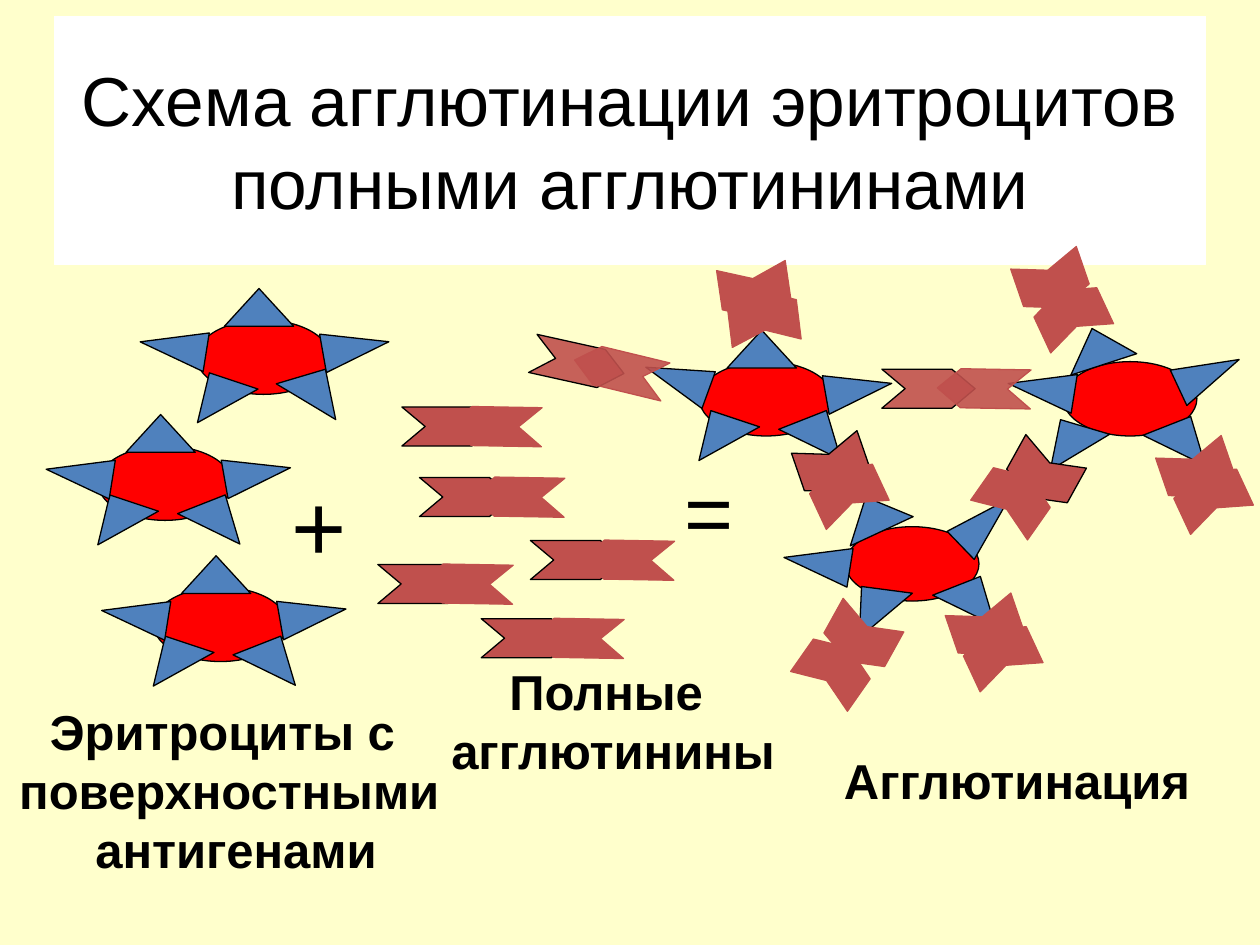
from dataclasses import dataclass, field

from lxml import etree
from pptx import Presentation
from pptx.dml.color import RGBColor
from pptx.enum.shapes import MSO_SHAPE
from pptx.enum.text import MSO_ANCHOR, MSO_AUTO_SIZE, PP_ALIGN
from pptx.oxml.ns import qn
from pptx.util import Pt

OVAL, TRIANGLE, CHEVRON = MSO_SHAPE.OVAL, MSO_SHAPE.ISOSCELES_TRIANGLE, MSO_SHAPE.CHEVRON
LEFT, CENTER = PP_ALIGN.LEFT, PP_ALIGN.CENTER
MIDDLE, TOP = MSO_ANCHOR.MIDDLE, MSO_ANCHOR.TOP
GROW, FIXED = MSO_AUTO_SIZE.SHAPE_TO_FIT_TEXT, MSO_AUTO_SIZE.NONE


@dataclass(frozen=True)
class Theme:
    font: str = "Arial"
    page: str = "FFFFCC"
    title_fill: str = "FFFFFF"
    ink: str = "000000"
    cell: str = "FF0000"
    antigen: str = "4F81BD"
    agglutinin: str = "C0504D"
    title_size: float = 39.6
    label_size: float = 28
    plus_size: float = 54
    equals_size: float = 48
    line_width: float = 0.75


THEME = Theme()
CELL_SIZE = (76.3, 42.5)
WIDE_SPIKE, TALL_SPIKE = (39.6, 21.6), (22.3, 38.2)


@dataclass(frozen=True)
class Spike:
    """Antigen triangle, its centre given from the centre of the cell."""
    dx: float
    dy: float
    turn: float


SPIKES = {
    "right": Spike(52.9, -5.5, 80),
    "top": Spike(-2.5, -28.4, 0),
    "lower_right": Spike(29.7, 16.4, 26),
    "lower_left": Spike(-26.3, 16.2, 331),
    "left": Spike(-49, -5, 279),
}


@dataclass(frozen=True)
class Cell:
    x: float
    y: float
    moved: dict[str, Spike] = field(default_factory=dict)


@dataclass(frozen=True)
class Agglutinin:
    """Two chevrons; x, y is the centre of the first, dx, dy leads to the second."""
    x: float
    y: float
    dx: float
    dy: float = 0
    turns: tuple[float, float] = (0, 181)
    size: tuple[float, float] = (53.3, 22.3)
    notch: float = 0.596
    first_line: str = THEME.ink
    alpha: int = 100


@dataclass(frozen=True)
class Label:
    lines: tuple[str, ...]
    box: tuple[float, float, float, float]
    size: float = THEME.label_size
    bold: bool = True
    align: PP_ALIGN = CENTER
    wrap: bool = False


CELLS = [
    Cell(150.5, 204.1, {"lower_right": Spike(29.9, 16.2, 31),
                        "lower_left": Spike(-25.6, 18.4, 331),
                        "left": Spike(-51.5, -5.8, 279)}),
    Cell(94.3, 276.1),
    Cell(126, 356.8),
    Cell(521.3, 322.2, {"right": Spike(41.4, -23.8, 46), "top": Spike(-22, -28.4, 335),
                        "lower_right": Spike(34.2, 16.9, 26),
                        "lower_left": Spike(-22, 21.2, 320),
                        "left": Spike(-54.4, -0.7, 279)}),
    Cell(437.8, 227.9, {"left": Spike(-50.8, -11.5, 290)}),
    Cell(645.8, 227.9, {"right": Spike(45, -14.4, 65), "top": Spike(-18.4, -29.9, 342),
                        "lower_right": Spike(29.9, 19.8, 26),
                        "lower_left": Spike(-34.2, 21.2, 329),
                        "left": Spike(-50.8, -5.8, 279)}),
]

SHORT = {"size": (30.2, 39.6), "notch": 0.25}
FALLING = {**SHORT, "turns": (71, 245)}
RISING = {**SHORT, "turns": (119, 305)}
PLAIN = {"first_line": THEME.agglutinin}

AGGLUTININS = [
    Agglutinin(242.6, 333.7, 23.8),
    Agglutinin(266.4, 284, 29.5),
    Agglutinin(256.3, 243.7, 26.6),
    Agglutinin(329.8, 320, 28.8),
    Agglutinin(301.7, 364.7, 28.1),
    Agglutinin(530.6, 222.1, 31.7, alpha=90),
    Agglutinin(330.5, 207.7, 23.8, 4.3, turns=(12.5, 193.6), alpha=90),
    Agglutinin(596.2, 271.1, -16.6, 13.7, **RISING),
    Agglutinin(475.9, 266.8, 7.9, 13.7, **FALLING),
    Agglutinin(491.8, 364.7, -15.1, 18, **RISING, **PLAIN),
    Agglutinin(563.8, 359.6, 7.9, 13.7, **FALLING, **PLAIN),
    Agglutinin(684, 269.6, 7.9, 13.7, **FALLING, **PLAIN),
    Agglutinin(431.3, 166.7, 5, 14.4, turns=(81.6, 263), **SHORT, **PLAIN),
    Agglutinin(601.2, 161.6, 10.8, 18, **FALLING, **PLAIN),
]

LABELS = [
    Label(("+",), (159.8, 263.5, 46.1, 72), THEME.plus_size, False, LEFT),
    Label(("=",), (383.8, 259.2, 42.5, 64.8), THEME.equals_size, False, LEFT),
    Label(("Эритроциты с ", "поверхностными", " антигенами"), (2.9, 397.4, 256.3, 108)),
    Label(("Полные ", "агглютинины"), (241.2, 374.4, 218.2, 74.2), wrap=True),
    Label(("Агглютинация",), (475.2, 425.5, 213.8, 41), align=LEFT),
]


def set_all(target, values: dict) -> None:
    for name, value in values.items():
        setattr(target, name, value)


def paint(shape, fill: str, line: str) -> None:
    shape.fill.solid()
    shape.fill.fore_color.rgb = RGBColor.from_string(fill)
    shape.line.color.rgb = RGBColor.from_string(line)
    shape.line.width = Pt(THEME.line_width)


def add_centred(page, kind, centre: tuple[float, float], size: tuple[float, float],
                fill: str, turn: float = 0, line: str = THEME.ink):
    (x, y), (width, height) = centre, size
    shape = page.shapes.add_shape(kind, Pt(x - width / 2), Pt(y - height / 2),
                                  Pt(width), Pt(height))
    shape.rotation = turn
    shape.shadow.inherit = False
    paint(shape, fill, line)
    return shape


def add_cell(page, cell: Cell) -> None:
    add_centred(page, OVAL, (cell.x, cell.y), CELL_SIZE, THEME.cell)
    for side, spike in {**SPIKES, **cell.moved}.items():
        size = TALL_SPIKE if side in ("left", "right") else WIDE_SPIKE
        centre = (cell.x + spike.dx, cell.y + spike.dy)
        add_centred(page, TRIANGLE, centre, size, THEME.antigen, spike.turn)


def add_agglutinin(page, body: Agglutinin) -> None:
    lines = (body.first_line, THEME.agglutinin)
    for step, (turn, line) in enumerate(zip(body.turns, lines)):
        centre = (body.x + step * body.dx, body.y + step * body.dy)
        half = add_centred(page, CHEVRON, centre, body.size, THEME.agglutinin, turn, line)
        half.adjustments[0] = body.notch
        if body.alpha < 100:
            color = half.fill._xPr.find(qn("a:solidFill"))[0]
            etree.SubElement(color, qn("a:alpha"), val=str(body.alpha * 1000))


def write(frame, lines: tuple[str, ...], size: float, bold: bool, align: PP_ALIGN) -> None:
    for index, line in enumerate(lines):
        para = frame.paragraphs[0] if index == 0 else frame.add_paragraph()
        para.alignment = align
        span = para.add_run()
        span.text = line
        set_all(span.font, {"name": THEME.font, "size": Pt(size), "bold": bold})
        span.font.color.rgb = RGBColor.from_string(THEME.ink)


def add_label(page, label: Label) -> None:
    frame = page.shapes.add_textbox(*map(Pt, label.box)).text_frame
    set_all(frame, {"word_wrap": label.wrap, "auto_size": GROW, "vertical_anchor": TOP})
    write(frame, label.lines, label.size, label.bold, label.align)


def set_title(page, text: str) -> None:
    title = page.shapes.title
    set_all(title, {"left": Pt(31), "top": Pt(9.4), "width": Pt(658), "height": Pt(141.8)})
    paint(title, THEME.title_fill, THEME.title_fill)
    set_all(title.text_frame, {"word_wrap": True, "auto_size": FIXED,
                               "vertical_anchor": MIDDLE})
    write(title.text_frame, (text,), THEME.title_size, False, CENTER)


def main() -> None:
    deck = Presentation()
    set_all(deck, {"slide_width": Pt(720), "slide_height": Pt(540)})
    page = deck.slides.add_slide(deck.slide_layouts[5])
    page.background.fill.solid()
    page.background.fill.fore_color.rgb = RGBColor.from_string(THEME.page)
    set_title(page, "Схема агглютинации эритроцитов полными агглютининами")
    for cell in CELLS:
        add_cell(page, cell)
    for body in AGGLUTININS:
        add_agglutinin(page, body)
    for label in LABELS:
        add_label(page, label)
    deck.save("out.pptx")


if __name__ == "__main__":
    main()
